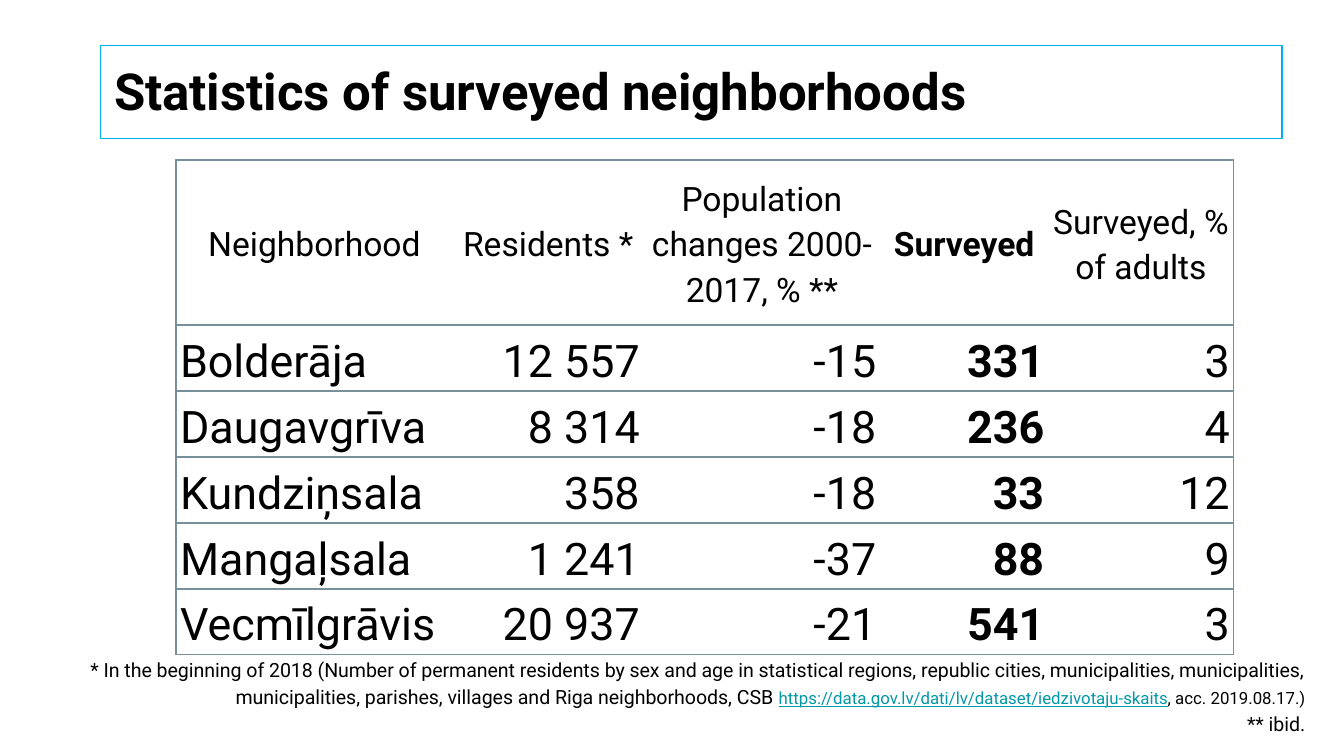
import pptx
import pptx.dml.color
import pptx.enum.shapes
import pptx.enum.text
import pptx.oxml
import pptx.oxml.ns
import pptx.util

Inches = pptx.util.Inches
Pt = pptx.util.Pt
ALIGN = pptx.enum.text.PP_ALIGN
ANCHOR = pptx.enum.text.MSO_ANCHOR

COLORS = {
    "text": "000000",
    "cell": "FFFFFF",
    "grid": "78909C",
    "frame": "00B0F0",
    "link": "0097A7",
}
COLUMN_WIDTHS = [2.06, 1.42, 1.76, 1.25, 1.38]
ROW_HEIGHTS = [1.23, 0.46, 0.44, 0.44, 0.44, 0.44]
SURVEYED_COLUMN = 3
ROWS = [
    ["Neighborhood", "Residents *", "Population changes 2000-2017, % **",
     "Surveyed", "Surveyed, % of adults"],
    ["Bolderāja", "12 557", "-15", "331", "3"],
    ["Daugavgrīva", "8 314", "-18", "236", "4"],
    ["Kundziņsala", "358", "-18", "33", "12"],
    ["Mangaļsala", "1 241", "-37", "88", "9"],
    ["Vecmīlgrāvis", "20 937", "-21", "541", "3"],
]
FOOTNOTES = [
    [("* In the beginning of 2018 (Number of permanent residents by sex and age in "
      "statistical regions, republic cities, municipalities, municipalities, "
      "municipalities, parishes, villages and Riga neighborhoods, CSB ", 10.5, "text"),
     ("https://data.gov.lv/dati/lv/dataset/iedzivotaju-skaits", 9, "link"),
     (", acc. 2019.08.17.)", 9, "text")],
    [("** ibid.", 10.5, "text")],
]


class SlideBuilder:
    font_name = "Roboto"
    line_spacing = 1.15
    box_margin = 0.1

    def __init__(self, slide):
        self.slide = slide

    def color(self, name):
        return pptx.dml.color.RGBColor.from_string(COLORS[name])

    def style_span(self, span, size, color="text", bold=False):
        span.font.name = self.font_name
        span.font.size = Pt(size)
        span.font.bold = bold
        span.font.color.rgb = self.color(color)

    def prepare_frame(self, frame):
        frame.word_wrap = True
        frame.vertical_anchor = ANCHOR.TOP
        frame.margin_left = frame.margin_right = Inches(self.box_margin)
        frame.margin_top = frame.margin_bottom = Inches(self.box_margin)

    def add_title(self, text, left, top, width, height):
        box = self.slide.shapes.add_shape(
            pptx.enum.shapes.MSO_SHAPE.RECTANGLE,
            Inches(left), Inches(top), Inches(width), Inches(height))
        box.shadow.inherit = False
        box.fill.background()
        box.line.color.rgb = self.color("frame")
        box.line.width = Pt(0.75)
        self.prepare_frame(box.text_frame)
        box.text_frame.text = text
        para = box.text_frame.paragraphs[0]
        para.alignment = ALIGN.LEFT
        self.style_span(para.runs[0], 27.3, bold=True)

    def add_footnotes(self, notes, left, top, width, height):
        box = self.slide.shapes.add_textbox(
            Inches(left), Inches(top), Inches(width), Inches(height))
        frame = box.text_frame
        self.prepare_frame(frame)
        for index, pieces in enumerate(notes):
            para = frame.add_paragraph() if index else frame.paragraphs[0]
            para.alignment = ALIGN.RIGHT
            para.line_spacing = self.line_spacing
            for text, size, color in pieces:
                span = para.add_run()
                span.text = text
                self.style_span(span, size, color)
                span.font.underline = color == "link"

    def add_borders(self, cell, visible_sides):
        """Draw 1 pt lines on the visible sides and clear the others."""
        properties = cell._tc.get_or_add_tcPr()
        solid = f'<a:solidFill><a:srgbClr val="{COLORS["grid"]}"/></a:solidFill>'
        for side in "LRTB":
            fill = solid if side in visible_sides else "<a:noFill/>"
            properties.append(pptx.oxml.parse_xml(
                f'<a:ln{side} {pptx.oxml.ns.nsdecls("a")} w="{Pt(1)}">'
                f'{fill}</a:ln{side}>'))

    def add_table(self, rows, left, top):
        frame = self.slide.shapes.add_table(
            len(rows), len(COLUMN_WIDTHS), Inches(left), Inches(top),
            Inches(sum(COLUMN_WIDTHS)), Inches(sum(ROW_HEIGHTS)))
        table = frame.table
        table.first_row = table.horz_banding = False
        for column, width in zip(table.columns, COLUMN_WIDTHS):
            column.width = Inches(width)
        for row, height in zip(table.rows, ROW_HEIGHTS):
            row.height = Inches(height)
        for row_index, values in enumerate(rows):
            for column_index, value in enumerate(values):
                self.fill_cell(table.cell(row_index, column_index), value,
                               row_index, column_index)

    def fill_cell(self, cell, value, row_index, column_index):
        is_header = row_index == 0
        is_first = column_index == 0
        is_last = column_index == len(COLUMN_WIDTHS) - 1
        self.add_borders(cell, "L" * is_first + "R" * is_last + "TB")
        cell.fill.solid()
        cell.fill.fore_color.rgb = self.color("cell")
        cell.margin_left = cell.margin_right = Inches(0.03)
        cell.margin_top = cell.margin_bottom = Inches(0.02)
        cell.vertical_anchor = ANCHOR.MIDDLE if is_header else ANCHOR.BOTTOM
        cell.text_frame.text = value
        para = cell.text_frame.paragraphs[0]
        para.line_spacing = self.line_spacing
        if is_header:
            para.alignment = ALIGN.CENTER
        else:
            para.alignment = ALIGN.LEFT if is_first else ALIGN.RIGHT
        self.style_span(para.runs[0], 18 if is_header else 24,
                        bold=column_index == SURVEYED_COLUMN)


def main():
    deck = pptx.Presentation()
    deck.slide_width = Inches(10)
    deck.slide_height = deck.slide_width * 9 // 16
    builder = SlideBuilder(deck.slides.add_slide(deck.slide_layouts[6]))
    builder.add_table(ROWS, 1.31, 1.19)
    builder.add_footnotes(FOOTNOTES, 0.31, 4.77, 9.5, 0.69)
    builder.add_title("Statistics of surveyed neighborhoods", 0.75, 0.34, 8.79, 0.69)
    deck.save("out.pptx")


if __name__ == "__main__":
    main()
